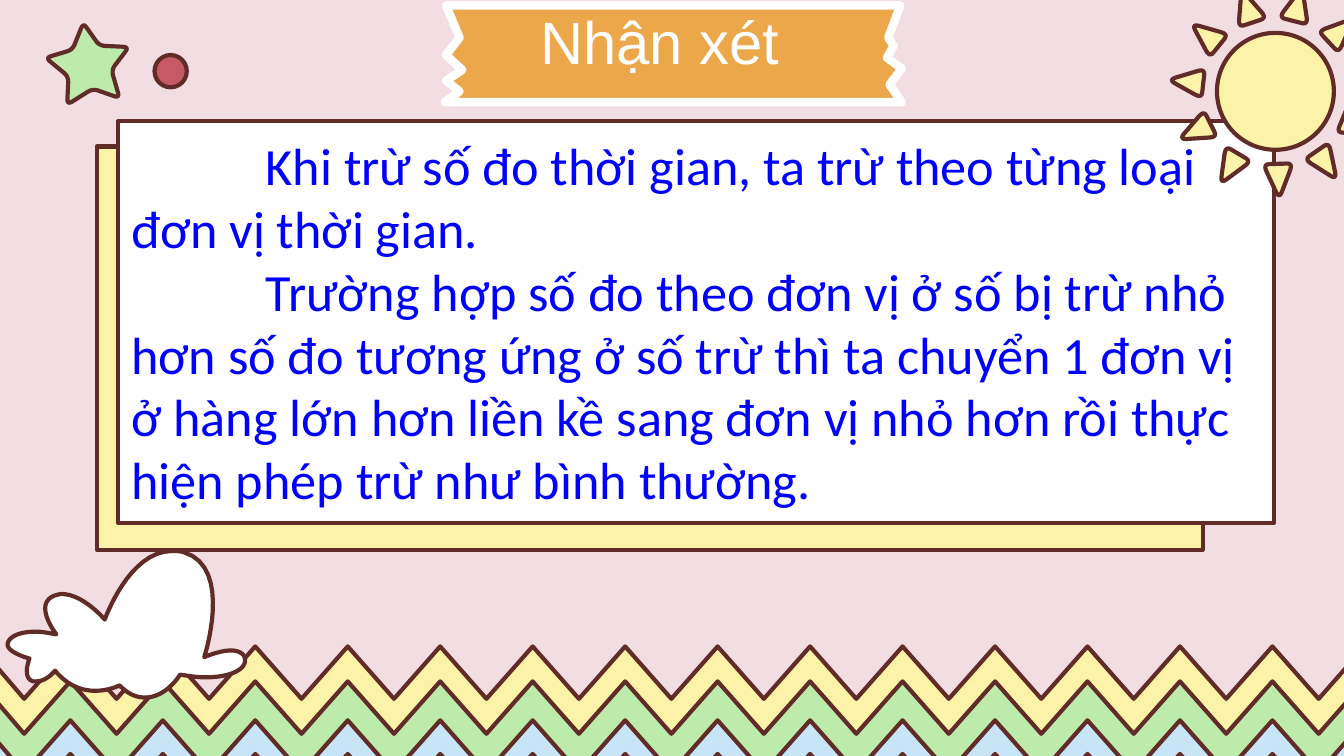
from math import cos, radians, sin

from pptx import Presentation
from pptx.dml.color import RGBColor
from pptx.enum.shapes import MSO_SHAPE as SHAPE
from pptx.enum.text import MSO_ANCHOR as ANCHOR, PP_ALIGN as ALIGN
from pptx.util import Inches, Pt

PINK = RGBColor(0xF2, 0xDD, 0xE3)
YELLOW = RGBColor(0xFC, 0xF3, 0xA8)
GREEN = RGBColor(0xBC, 0xEB, 0xAC)
SKY = RGBColor(0xC7, 0xE5, 0xF6)
RED = RGBColor(0xC5, 0x59, 0x64)
ORANGE = RGBColor(0xEC, 0xA7, 0x4A)
BROWN = RGBColor(0x61, 0x2C, 0x28)
BLUE = RGBColor(0x00, 0x00, 0xFF)
WHITE = RGBColor(0xFF, 0xFF, 0xFF)

TITLE = "Nhận xét"
REMARKS = [
    "Khi trừ số đo thời gian, ta trừ theo từng loại đơn vị thời gian.",
    "Trường hợp số đo theo đơn vị ở số bị trừ nhỏ hơn số đo tương ứng ở số "
    "trừ thì ta chuyển 1 đơn vị ở hàng lớn hơn liền kề sang đơn vị nhỏ hơn "
    "rồi thực hiện phép trừ như bình thường.",
]

# Corners and curves are relative to the top left of their own box.
TAPE = [(3.39, 0), (0.01, 0), (0.11, 0.24), (0.01, 0.37), (0.13, 0.48),
        (0.01, 0.56), (0.11, 0.64), (0, 0.72), (3.4, 0.72), (3.31, 0.59),
        (3.4, 0.47), (3.29, 0.39), (3.34, 0.3), (3.3, 0.24)]
STAR = [(0.26, -0.03), (0.38, 0.14), (0.6, 0.15), (0.47, 0.32), (0.53, 0.53),
        (0.33, 0.46), (0.14, 0.58), (0.15, 0.37), (-0.02, 0.23), (0.18, 0.17)]
CLOUD_START = (1.25, 0)
CLOUD_CURVES = [  # two control points and an end point
    (0.93, 0, 0.75, 0.51, 0.75, 0.51),
    (0.75, 0.51, 0.59, 0.32, 0.43, 0.32),
    (0.41, 0.32, 0.39, 0.33, 0.38, 0.33),
    (0.21, 0.39, 0.39, 0.62, 0.39, 0.62),
    (0.33, 0.61, 0.28, 0.6, 0.24, 0.6),
    (0.05, 0.6, 0.03, 0.68, 0.03, 0.68),
    (0, 0.75, 0.19, 0.8, 0.19, 0.8),
    (0.19, 0.8, 0.13, 0.95, 0.22, 0.97),
    (0.23, 0.97, 0.23, 0.97, 0.24, 0.97),
    (0.32, 0.97, 0.38, 0.89, 0.38, 0.89),
    (0.48, 1.01, 0.59, 1.04, 0.68, 1.04),
    (0.78, 1.04, 0.86, 1, 0.86, 1),
    (0.93, 1.07, 0.99, 1.09, 1.05, 1.09),
    (1.21, 1.09, 1.31, 0.92, 1.31, 0.92),
    (1.38, 0.93, 1.44, 0.94, 1.5, 0.94),
    (1.68, 0.94, 1.82, 0.88, 1.79, 0.79),
    (1.78, 0.76, 1.74, 0.74, 1.69, 0.74),
    (1.6, 0.74, 1.49, 0.79, 1.49, 0.79),
    (1.49, 0.79, 1.71, 0.12, 1.34, 0.01),
    (1.31, 0, 1.28, 0, 1.25, 0),
]


def paint(sp, fill, line=BROWN, width=2.25):
    sp.shadow.inherit = False
    sp.fill.solid()
    sp.fill.fore_color.rgb = fill
    sp.line.color.rgb = line
    sp.line.width = Pt(width)
    return sp


def add_preset(slide, kind, box, fill):
    return paint(slide.shapes.add_shape(kind, *map(Inches, box)), fill)


def add_outline(slide, left, top, points, fill, **line):
    """Draw a closed outline whose points are relative to left, top."""
    first, *rest = [(Inches(left + x), Inches(top + y)) for x, y in points]
    builder = slide.shapes.build_freeform(*first)
    builder.add_line_segments(rest, close=True)
    return paint(builder.convert_to_shape(), fill, **line)


def bezier(controls, steps=16):
    """Sample a Bezier curve of any degree, leaving out its start."""
    sampled = []
    for i in range(1, steps + 1):
        t, pts = i / steps, controls
        while len(pts) > 1:
            pts = [(ax + (bx - ax) * t, ay + (by - ay) * t)
                   for (ax, ay), (bx, by) in zip(pts, pts[1:])]
        sampled.append(pts[0])
    return sampled


def rounded(corners, share=0.2):
    """Round each corner over a share of the edges that meet there."""
    points = []
    for i, (x, y) in enumerate(corners):
        before, after = [(x + (nx - x) * share, y + (ny - y) * share)
                         for nx, ny in (corners[i - 1],
                                        corners[(i + 1) % len(corners)])]
        points += [before] + bezier([before, (x, y), after], 5)
    return points


def add_zigzag(slide, left, top, fill):
    width, pitch, depth, thickness = 10.24, 0.344, 0.39, 0.29
    edge = [(0, 0.04)]
    edge += [(0.3 + k * pitch, 0 if k % 2 else depth) for k in range(29)]
    edge += [(width, 0.04)]
    lower = [(x, y + thickness) for x, y in reversed(edge)]
    add_outline(slide, left, top, edge + lower, fill)


def add_sun(slide, cx, cy):
    radius, inner, outer, half = 0.435, 0.54, 0.8, 0.11
    add_preset(slide, SHAPE.OVAL,
               (cx - radius, cy - radius, 2 * radius, 2 * radius), YELLOW)
    for i in range(11):
        if i == 8:  # this ray would lie beyond the slide edge
            continue
        a = radians(88 + i * 360 / 11)
        ray = [(r * cos(a) - w * sin(a), r * sin(a) + w * cos(a))
               for r, w in ((outer, 0), (inner, half), (inner, -half))]
        add_outline(slide, cx, cy, rounded(ray), YELLOW)


def add_cloud(slide, left, top):
    points = [CLOUD_START]
    for x1, y1, x2, y2, x, y in CLOUD_CURVES:
        points += bezier([points[-1], (x1, y1), (x2, y2), (x, y)])
    add_outline(slide, left, top, points, WHITE)


def style_paragraph(p, font, size, color):
    p.alignment = ALIGN.LEFT
    p.font.name, p.font.size, p.font.color.rgb = font, Pt(size), color


def add_remarks(slide, left, top, width, height):
    sp = add_preset(slide, SHAPE.RECTANGLE, (left, top, width, height), WHITE)
    tf = sp.text_frame
    tf.word_wrap = True
    tf.vertical_anchor = ANCHOR.MIDDLE
    tf.margin_left = tf.margin_right = Inches(0.1)
    tf.margin_top = tf.margin_bottom = Inches(0.1)
    tf.text = "\n".join(REMARKS)
    for p in tf.paragraphs:
        p._p.get_or_add_pPr().set("indent", str(Inches(1)))
        style_paragraph(p, "Calibri", 28, BLUE)


def add_title(slide, left, top):
    add_outline(slide, left, top, TAPE, ORANGE, line=WHITE, width=4.5)
    box = (left + 0.61, top - 0.05, 2.14, 0.64)
    tf = slide.shapes.add_textbox(*map(Inches, box)).text_frame
    tf.word_wrap = True
    tf.text = TITLE
    style_paragraph(tf.paragraphs[0], "Arial", 32, WHITE)


def main():
    prs = Presentation()
    prs.slide_width = Inches(10)
    prs.slide_height = prs.slide_width * 9 // 16
    slide = prs.slides.add_slide(prs.slide_layouts[6])
    slide.background.fill.solid()
    slide.background.fill.fore_color.rgb = PINK

    add_preset(slide, SHAPE.RECTANGLE, (0.72, 1.09, 8.23, 3), YELLOW)
    for top, fill in ((4.81, YELLOW), (5.32, SKY), (5.07, GREEN)):
        add_zigzag(slide, -0.12, top, fill)
    add_remarks(slide, 0.88, 0.9, 8.6, 2.99)
    add_sun(slide, 9.49, 0.68)
    add_cloud(slide, 0.03, 4.1)
    add_outline(slide, 0.36, 0.2, rounded(STAR), GREEN)
    add_preset(slide, SHAPE.OVAL, (1.15, 0.41, 0.24, 0.24), RED)
    add_title(slide, 3.31, 0.04)
    prs.save("out.pptx")


if __name__ == "__main__":
    main()
